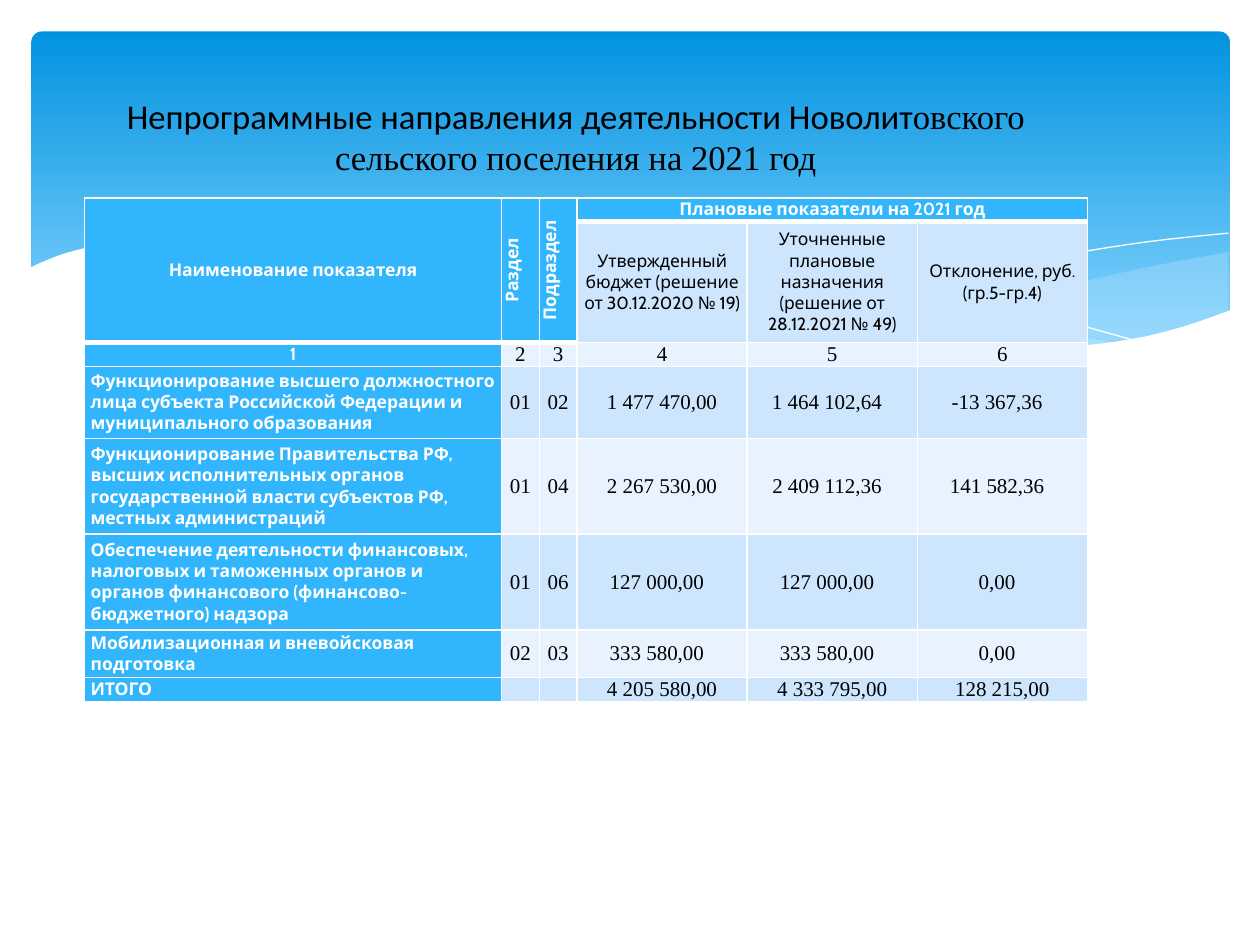
from lxml.etree import SubElement
from pptx import Presentation
from pptx.dml.color import RGBColor
from pptx.enum.shapes import MSO_SHAPE
from pptx.enum.text import MSO_ANCHOR, MSO_AUTO_SIZE, PP_ALIGN
from pptx.oxml.ns import qn
from pptx.util import Inches, Pt

WHITE = RGBColor(0xFF, 0xFF, 0xFF)
BLACK = RGBColor(0x00, 0x00, 0x00)
SKY_TOP = RGBColor(0x02, 0x93, 0xE0)
SKY_BOTTOM = RGBColor(0x83, 0xD3, 0xFE)
MIST = RGBColor(0xC6, 0xE7, 0xFC)
HEADER_BLUE = RGBColor(0x31, 0xB6, 0xFD)
BANDS = (RGBColor(0xE8, 0xF3, 0xFF), RGBColor(0xCE, 0xE5, 0xFE))

TITLE_RUNS = [
    ("Непрограммные направления деятельности Новолит", "Calibri"),
    ("овского сельского поселения на 2021 год", "Times New Roman"),
]
ROWS = [
    ("Наименование показателя", "Раздел", "Подраздел",
     "Плановые показатели на 2021 год", "", ""),
    ("", "", "", "Утвержденный бюджет (решение от 30.12.2020 № 19)",
     "Уточненные плановые назначения (решение от 28.12.2021 № 49)",
     "Отклонение, руб. (гр.5-гр.4)"),
    ("1", "2", "3", "4", "5", "6"),
    ("Функционирование высшего должностного лица субъекта Российской Федерации "
     "и муниципального образования",
     "01", "02", "1 477 470,00", "1 464 102,64", "-13 367,36"),
    ("Функционирование Правительства РФ, высших исполнительных органов "
     "государственной власти субъектов РФ, местных администраций",
     "01", "04", "2 267 530,00", "2 409 112,36", "141 582,36"),
    ("Обеспечение деятельности финансовых, налоговых и таможенных органов и "
     "органов финансового (финансово-бюджетного) надзора",
     "01", "06", "127 000,00", "127 000,00", "0,00"),
    ("Мобилизационная и вневойсковая подготовка",
     "02", "03", "333 580,00", "333 580,00", "0,00"),
    ("ИТОГО", "", "", "4 205 580,00", "4 333 795,00", "128 215,00"),
]
COLUMN_WIDTHS = [3.31, 0.3, 0.3, 1.35, 1.35, 1.35]
ROW_HEIGHTS = [0.19, 0.96, 0.19, 0.57, 0.76, 0.76, 0.38, 0.19]
MERGES = [(0, 0, 1, 0), (0, 1, 1, 1), (0, 2, 1, 2), (0, 3, 0, 5)]
# Amounts set slightly left of the column centre: row -> columns
INDENTED = {3: (4, 5), 4: (4, 5), 5: (3, 4, 5), 6: (3, 4, 5)}

# Each wave is a list of smooth edges, joined by straight lines
RIGHT_WAVE = [
    [(9.75, 2), (9.21, 2.1), (8.61, 2.23), (7.79, 2.42), (7.06, 2.57), (6.61, 2.65)],
    [(6.61, 2.65), (7.05, 2.71), (7.57, 2.76), (8.14, 2.78), (8.63, 2.75),
     (9.05, 2.69), (9.42, 2.59), (9.75, 2.47)],
]
MIDDLE_WAVE = [
    [(8.93, 2.73), (8.07, 2.6), (7.06, 2.4), (6.29, 2.22), (5.55, 2.05),
     (4.89, 1.94), (4.2, 1.87), (3.61, 1.85), (2.86, 1.91)],
    [(2.86, 1.91), (3.62, 2.03), (4.49, 2.22), (5.3, 2.4), (6.18, 2.58),
     (6.95, 2.7), (7.61, 2.77), (8.28, 2.78), (8.93, 2.73)],
]
LONG_LINE = [[(3.09, 1.95), (3.53, 1.89), (4.16, 1.87), (4.89, 1.9), (5.82, 2),
              (6.65, 2.13), (7.6, 2.33), (8.31, 2.51), (9.07, 2.72)]]
SHORT_LINE = [[(6.13, 2.57), (6.72, 2.41), (7.48, 2.23), (8.36, 2.04),
               (9.1, 1.92), (9.75, 1.85)]]
WHITE_WAVE = [
    [(9.77, 2.46), (9.4, 2.59), (8.99, 2.69), (8.5, 2.75), (7.93, 2.76),
     (7.26, 2.72), (6.48, 2.62), (5.55, 2.45), (4.47, 2.2), (3.65, 2.02),
     (2.92, 1.9), (2.3, 1.85), (1.61, 1.84), (1.06, 1.89), (0.59, 1.99),
     (0.36, 2.07), (0.23, 2.13)],
    [(0.23, 3.29), (9.77, 3.29)],
]


def smooth_edge(points, steps=4):
    """Return points along a Catmull-Rom curve through the given points."""
    padded = [points[0], *points, points[-1]]
    curve = [points[0]]
    for a, b, c, d in zip(padded, padded[1:], padded[2:], padded[3:]):
        for step in range(1, steps + 1):
            t = step / steps
            curve.append(tuple(
                (2 * q + (r - p) * t + (2 * p - 5 * q + 4 * r - s) * t ** 2
                 + (3 * q - p - 3 * r + s) * t ** 3) / 2
                for p, q, r, s in zip(a, b, c, d)))
    return curve


def add_wave(shapes, edges, fill=None, opacity=100):
    """Draw a filled wave, or a thin white open line when there is no fill."""
    points = [(Inches(x), Inches(y)) for edge in edges for x, y in smooth_edge(edge)]
    builder = shapes.build_freeform(*points[0])
    builder.add_line_segments(points[1:], close=fill is not None)
    wave = builder.convert_to_shape()
    wave.shadow.inherit = False
    if fill is None:
        wave.fill.background()
        wave.line.color.rgb = WHITE
        wave.line.width = Pt(0)
        return
    wave.fill.solid()
    wave.fill.fore_color.rgb = fill
    wave.line.fill.background()
    if opacity < 100:
        color = wave.element.spPr.find(qn("a:solidFill")).find(qn("a:srgbClr"))
        SubElement(color, qn("a:alpha"), val=str(opacity * 1000))


def add_background(shapes):
    sky = shapes.add_shape(MSO_SHAPE.ROUNDED_RECTANGLE, Inches(0.25), Inches(0.25),
                           Inches(9.51), Inches(2.7))
    sky.adjustments[0] = 0.03
    sky.shadow.inherit = False
    sky.line.fill.background()
    sky.fill.gradient()
    sky.fill.gradient_angle = 270
    for stop, color, position in zip(sky.fill.gradient_stops,
                                     (SKY_TOP, SKY_BOTTOM), (0, 0.9)):
        stop.color.rgb = color
        stop.position = position
    add_wave(shapes, RIGHT_WAVE, MIST, 29)
    add_wave(shapes, MIDDLE_WAVE, MIST, 40)
    add_wave(shapes, LONG_LINE)
    add_wave(shapes, SHORT_LINE)
    add_wave(shapes, WHITE_WAVE, WHITE)


def border_below(row, column):
    """Return the width in points: the rule under the header is thicker."""
    return 3 if row == 0 or (row == 1 and column < 3) else 1


def set_borders(cell, row, column):
    above = border_below(row - 1, column) if row else 1
    widths = {"L": 1, "R": 1, "T": above, "B": border_below(row, column)}
    properties = cell._tc.get_or_add_tcPr()
    for side, width in widths.items():
        line = SubElement(properties, qn(f"a:ln{side}"), w=str(Pt(width)))
        SubElement(SubElement(line, qn("a:solidFill")), qn("a:srgbClr"), val=str(WHITE))


def format_cell(cell, row, column, text):
    is_header = row == 0 or column == 0
    is_number = row > 1 and column > 0
    set_borders(cell, row, column)
    cell.fill.solid()
    is_blue = is_header or (row == 1 and column < 3)
    cell.fill.fore_color.rgb = HEADER_BLUE if is_blue else BANDS[row % 2]
    cell.vertical_anchor = MSO_ANCHOR.MIDDLE
    cell.margin_top = cell.margin_bottom = 0
    cell.margin_left = cell.margin_right = Inches(0.05)
    if column in INDENTED.get(row, ()):
        cell.margin_right += Pt(6)
    if row == 0 and column in (1, 2):
        cell._tc.get_or_add_tcPr().set("vert", "vert270")
    cell.text = text
    paragraph = cell.text_frame.paragraphs[0]
    paragraph.alignment = PP_ALIGN.LEFT if column == 0 and row > 2 else PP_ALIGN.CENTER
    for run in paragraph.runs:
        run.font.name = "Times New Roman" if is_number else "Cabin"
        run.font.size = Pt(12 if is_number else 10)
        run.font.bold = is_header
        run.font.color.rgb = WHITE if is_header else BLACK
    if not text:
        SubElement(paragraph._p, qn("a:endParaRPr"), sz="1000")


def add_budget_table(shapes):
    table = shapes.add_table(len(ROWS), len(COLUMN_WIDTHS), Inches(0.67), Inches(1.57),
                             Inches(sum(COLUMN_WIDTHS)), Inches(sum(ROW_HEIGHTS))).table
    for column, width in zip(table.columns, COLUMN_WIDTHS):
        column.width = Inches(width)
    for row, height in zip(table.rows, ROW_HEIGHTS):
        row.height = Inches(height)
    for row, texts in enumerate(ROWS):
        for column, text in enumerate(texts):
            format_cell(table.cell(row, column), row, column, text)
    for top, left, bottom, right in MERGES:
        table.cell(top, left).merge(table.cell(bottom, right))


def format_title(title):
    title.left, title.top = Inches(0.67), Inches(0.67)
    title.width, title.height = Inches(7.8), Inches(1.44)
    frame = title.text_frame
    frame.auto_size = MSO_AUTO_SIZE.NONE
    frame.word_wrap = True
    frame.vertical_anchor = MSO_ANCHOR.MIDDLE
    frame.margin_bottom = Inches(0.67)
    paragraph = frame.paragraphs[0]
    paragraph.alignment = PP_ALIGN.CENTER
    for text, font_name in TITLE_RUNS:
        run = paragraph.add_run()
        run.text = text
        run.font.name = font_name
        run.font.size = Pt(19.8)
        run.font.color.rgb = BLACK
    title.element.getparent().append(title.element)  # bring to front


def main():
    presentation = Presentation()
    presentation.slide_width, presentation.slide_height = Inches(10), Inches(7.5)
    slide = presentation.slides.add_slide(presentation.slide_layouts[5])
    add_background(slide.shapes)
    add_budget_table(slide.shapes)
    format_title(slide.shapes.title)
    presentation.save("out.pptx")


if __name__ == "__main__":
    main()
